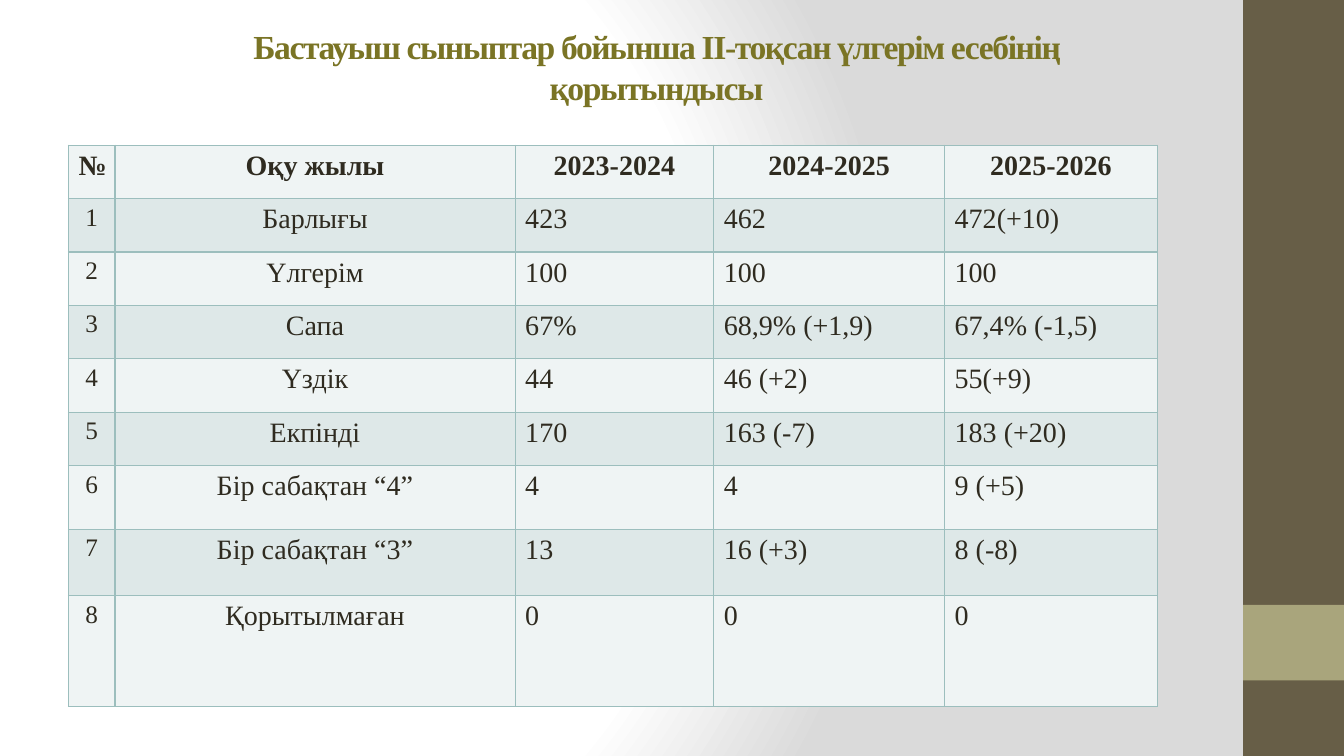
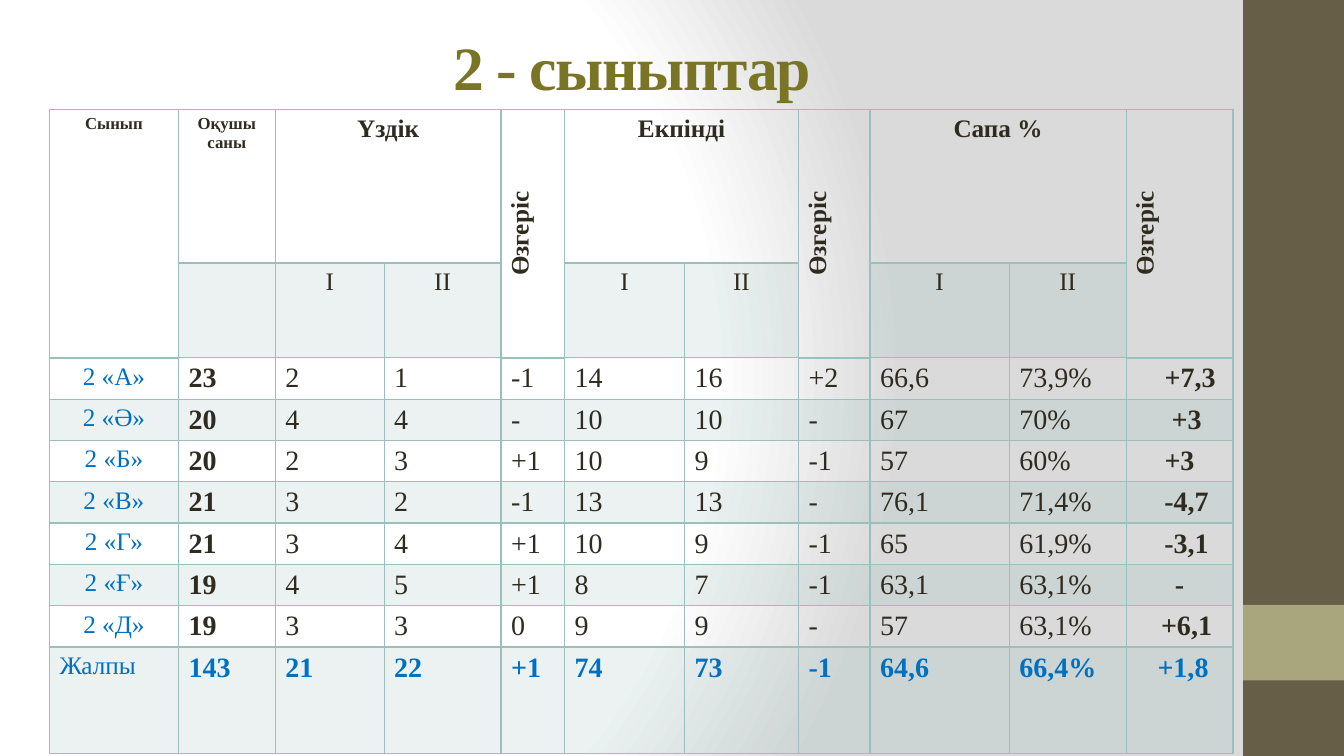
from itertools import product

from lxml import etree
from pptx import Presentation
from pptx.dml.color import RGBColor
from pptx.enum.shapes import MSO_SHAPE as Shape
from pptx.enum.text import MSO_ANCHOR as Anchor, MSO_AUTO_SIZE as AutoSize, PP_ALIGN as Align
from pptx.oxml import parse_xml
from pptx.oxml.ns import nsdecls, qn
from pptx.util import Inches, Pt

FONT = "Times New Roman"
OLIVE = RGBColor(0x7A, 0x74, 0x25)
INK = RGBColor(0x2F, 0x2B, 0x20)
BLUE = RGBColor(0x00, 0x70, 0xC0)
TEAL = RGBColor(0x9C, 0xBE, 0xBD)
PALE = RGBColor(0xEF, 0xF4, 0xF4)
MIST = RGBColor(0xDE, 0xE8, 0xE8)
BROWN = RGBColor(0x67, 0x5E, 0x47)
KHAKI = RGBColor(0xA9, 0xA5, 0x7C)
WHITE = RGBColor(0xFF, 0xFF, 0xFF)
GREY = RGBColor(0xDA, 0xDA, 0xDA)

WIDTH, HEIGHT = 13.33, 7.5
BAND_WIDTH = 1
SPACE_STEP = 0.07

YEAR_COLUMNS = (0.46, 3.97, 1.97, 2.29, 2.11)
YEAR_HEIGHTS = (0.53,) * 6 + (0.63, 0.66, 1.1)
YEAR_HEADER = ("№", "Оқу жылы", "2023-2024", "2024-2025", "2025-2026")
YEAR_RESULTS = (
    ("Барлығы", "423", "462", "472(+10)"),
    ("Үлгерім", "100", "100", "100"),
    ("Сапа", "67%", "68,9% (+1,9)", "67,4% (-1,5)"),
    ("Үздік", "44", "46 (+2)", "55(+9)"),
    ("Екпінді", "170", "163 (-7)", "183 (+20)"),
    ("Бір сабақтан “4”", "4", "4", "9 (+5)"),
    ("Бір сабақтан “3”", "13", "16 (+3)", "8 (-8)"),
    ("Қорытылмаған", "0", "0", "0"),
)

CLASS_COLUMNS = (1.28, 0.96, 1.08, 1.16, 0.63, 1.19, 1.13, 0.71, 1.38, 1.16, 1.06)
CLASS_HEIGHTS = (1.52, 0.94) + (0.41,) * 7 + (1.06,)
GROUP_COLUMNS = (2, 5, 8)
CHANGE_COLUMNS = (4, 7, 10)
CLASS_HEADER = ("Сынып", "Оқушы саны", "Үздік", "", "Өзгеріс", "Екпінді", "", "Өзгеріс",
                "Сапа %", "", "Өзгеріс")
QUARTERS = ("", "") + ("I", "II", "") * 3
CLASS_RESULTS = (
    ("2 «А»", "23", "2", "1", "-1", "14", "16", "+2", "66,6", "73,9%", "+7,3"),
    ("2 «Ә»", "20", "4", "4", "-", "10", "10", "-", "67", "70%", "+3"),
    ("2 «Б»", "20", "2", "3", "+1", "10", "9", "-1", "57", "60%", "+3"),
    ("2 «В»", "21", "3", "2", "-1", "13", "13", "-", "76,1", "71,4%", "-4,7"),
    ("2 «Г»", "21", "3", "4", "+1", "10", "9", "-1", "65", "61,9%", "-3,1"),
    ("2 «Ғ»", "19", "4", "5", "+1", "8", "7", "-1", "63,1", "63,1%", "-"),
    ("2 «Д»", "19", "3", "3", "0", "9", "9", "-", "57", "63,1%", "+6,1"),
    ("Жалпы", "143", "21", "22", "+1", "74", "73", "-1", "64,6", "66,4%", "+1,8"),
)
QUALITY_SHIFTS = (3, 2, 0, 2, 2, 0, 2, 1)


def set_backdrop(layout):
    """Give the layout its round white-to-grey gradient."""
    stops = "".join(
        f'<a:gs pos="{share * 1000}"><a:srgbClr val="{color}"/></a:gs>'
        for share, color in ((0, WHITE), (75, WHITE), (100, GREY)))
    layout.element.cSld.insert(0, parse_xml(
        f'<p:bg {nsdecls("p", "a")}><p:bgPr><a:gradFill rotWithShape="1">'
        f'<a:gsLst>{stops}</a:gsLst><a:path path="circle">'
        '<a:fillToRect l="20000" t="50000" r="100000" b="50000"/></a:path>'
        '</a:gradFill><a:effectLst/></p:bgPr></p:bg>'))


def move_band_to_layout(slide, top, height, color):
    """Draw a right-edge band and hand it to the slide's layout."""
    band = slide.shapes.add_shape(
        Shape.RECTANGLE, Inches(WIDTH - BAND_WIDTH), Inches(top),
        Inches(BAND_WIDTH), Inches(height))
    band.shadow.inherit = False
    band.fill.solid()
    band.fill.fore_color.rgb = color
    band.line.fill.background()
    slide.slide_layout.shapes.element.append(band.element)


def style_text(frame, size, bold, color, align):
    """Format every run of a text frame alike."""
    for paragraph in frame.paragraphs:
        paragraph.alignment = align
        for run in paragraph.runs:
            run.font.name = FONT
            run.font.size = Pt(size)
            run.font.bold = bold
            run.font.color.rgb = color


def set_title(slide, text, box, size):
    """Place and format the slide title."""
    title = slide.shapes.title
    title.left, title.top, title.width, title.height = map(Inches, box)
    frame = title.text_frame
    frame.text = text
    frame.word_wrap = True
    frame.auto_size = AutoSize.NONE
    frame.vertical_anchor = Anchor.MIDDLE
    style_text(frame, size, True, OLIVE, Align.CENTER)
    for properties in title.element.iter(qn("a:rPr")):
        properties.set("spc", "-100")


def set_borders(cell, top=1, bottom=1):
    """Rule the four sides of a cell, widths in points."""
    properties = cell._tc.get_or_add_tcPr()
    sides = (("lnL", 1), ("lnR", 1), ("lnT", top), ("lnB", bottom))
    for position, (side, width) in enumerate(sides):
        properties.insert(position, parse_xml(
            f'<a:{side} {nsdecls("a")} w="{Pt(width)}"><a:solidFill>'
            f'<a:srgbClr val="{TEAL}"/></a:solidFill></a:{side}>'))


def set_fill(cell, color, opacity=100):
    """Fill a cell, or leave it clear when there is no color."""
    if color is None:
        cell.fill.background()
        return
    cell.fill.solid()
    cell.fill.fore_color.rgb = color
    if opacity < 100:
        tint = next(cell._tc.tcPr.iter(qn("a:srgbClr")))
        etree.SubElement(tint, qn("a:alpha"), val=str(opacity * 1000))


def add_grid(slide, left, top, widths, heights):
    """Add an unstyled table with the given column and row sizes."""
    table = slide.shapes.add_table(
        len(heights), len(widths), Inches(left), Inches(top),
        Inches(sum(widths)), Inches(sum(heights))).table
    table.first_row = table.horz_banding = False
    for column, width in zip(table.columns, widths):
        column.width = Inches(width)
    for row, height in zip(table.rows, heights):
        row.height = Inches(height)
    return table


def write_cell(cell, text, size, bold=False, color=INK, align=Align.LEFT):
    """Put formatted text in a cell."""
    cell.text_frame.text = text
    style_text(cell.text_frame, size, bold, color, align)


def add_year_table(slide):
    """Compare the results of three school years."""
    table = add_grid(slide, 0.68, 1.44, YEAR_COLUMNS, YEAR_HEIGHTS)
    numbered = [(str(n), *result) for n, result in enumerate(YEAR_RESULTS, 1)]
    for r, texts in enumerate([YEAR_HEADER, *numbered]):
        for c, text in enumerate(texts):
            cell = table.cell(r, c)
            header = r == 0
            write_cell(cell, text, 18 if c == 0 and not header else 20, header,
                       align=Align.CENTER if header or c < 2 else Align.LEFT)
            set_fill(cell, MIST if r % 2 else PALE)
            set_borders(cell)


def write_class_header(table):
    """Write and merge the two header rows of the class table."""
    for c, (heading, quarter) in enumerate(zip(CLASS_HEADER, QUARTERS)):
        write_cell(table.cell(0, c), heading, 12 if c < 2 else 18, True, align=Align.CENTER)
        write_cell(table.cell(1, c), quarter, 18, align=Align.CENTER)
    for c in GROUP_COLUMNS:
        table.cell(0, c).merge(table.cell(0, c + 1))
    for c in (0, *CHANGE_COLUMNS):
        table.cell(0, c).merge(table.cell(1, c))
    for c in CHANGE_COLUMNS:
        table.cell(0, c)._tc.get_or_add_tcPr().set("vert", "vert270")


def write_class_results(table):
    """Write one row for each class and the total."""
    last = len(CLASS_COLUMNS) - 1
    for r, (texts, shift) in enumerate(zip(CLASS_RESULTS, QUALITY_SHIFTS), 2):
        total = r == len(CLASS_HEIGHTS) - 1
        for c, text in enumerate(texts):
            label = c == 0
            centred = c == last or label and not total
            write_cell(table.cell(r, c), text, 18 if label else 20,
                       c in (1, last) or total and not label,
                       BLUE if label or total else INK,
                       Align.CENTER if centred else Align.LEFT)
        table.cell(r, last).margin_left = Inches(0.1 + shift * SPACE_STEP)


def add_class_table(slide):
    """Show the results of the second-year classes by quarter."""
    table = add_grid(slide, 0.49, 1.09, CLASS_COLUMNS, CLASS_HEIGHTS)
    write_class_header(table)
    write_class_results(table)
    for r, c in product(range(len(CLASS_HEIGHTS)), range(len(CLASS_COLUMNS))):
        cell = table.cell(r, c)
        set_fill(cell, TEAL if r % 2 else None, 20)
        set_borders(cell, top=2 if r == 1 else 1, bottom=2 if r == 0 else 1)


def main():
    """Build and save the two slides."""
    deck = Presentation()
    deck.slide_width, deck.slide_height = Inches(WIDTH), Inches(HEIGHT)
    layout = deck.slide_layouts[5]
    set_backdrop(layout)

    years = deck.slides.add_slide(layout)
    move_band_to_layout(years, 0, HEIGHT, BROWN)
    move_band_to_layout(years, HEIGHT * 0.8, HEIGHT * 0.1, KHAKI)
    set_title(years, "Бастауыш сыныптар бойынша II-тоқсан үлгерім есебінің қорытындысы",
              (1.89, 0.27, 9.24, 0.78), 24)
    add_year_table(years)

    classes = deck.slides.add_slide(layout)
    set_title(classes, "2 - сыныптар", (1.77, 0.26, 9, 0.79), 44)
    add_class_table(classes)

    deck.save("out.pptx")


if __name__ == "__main__":
    main()
